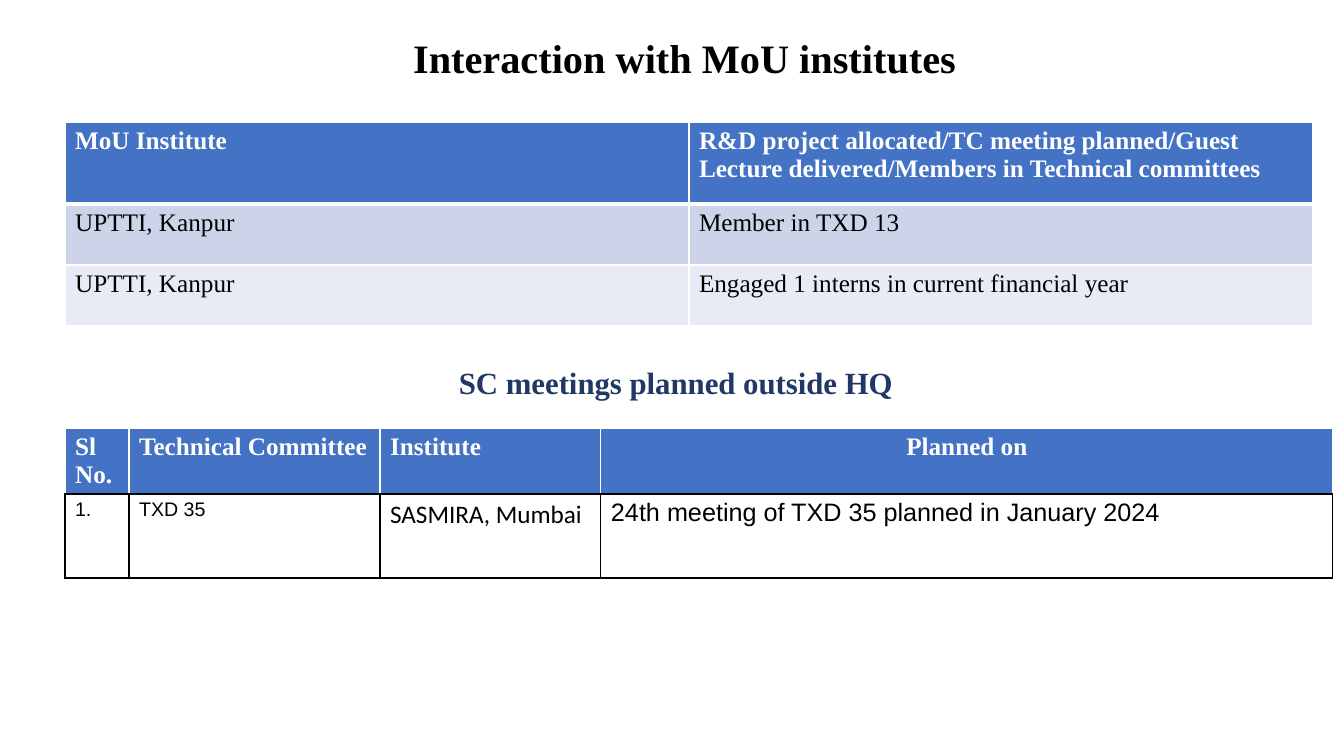
from pptx import Presentation
from pptx.dml.color import RGBColor as RGB
from pptx.enum.text import MSO_ANCHOR as Anchor, MSO_AUTO_SIZE as Auto, PP_ALIGN as Align
from pptx.oxml import parse_xml
from pptx.oxml.ns import nsdecls
from pptx.util import Pt

PX = 914400 / 100.8
HUES = {"white": "FFFFFF", "black": "000000", "blue": "4472C4",
        "navy": "203864", "mid": "CDD4EA", "pale": "E8EBF5"}
SERIF = "Times New Roman"


def px(n):
    """Turn whole px into EMU."""
    return round(n * PX)


def write(frame, text, size=18, font=SERIF, hue="black", bold=False,
          align=Align.LEFT, space=None):
    """Put one formatted paragraph in a text frame."""
    frame.word_wrap = True
    para = frame.paragraphs[0]
    para.alignment = align
    if space:
        para.line_spacing = space
    run = para.add_run()
    run.text = text
    run.font.size, run.font.name, run.font.bold = Pt(size), font, bold
    run.font.color.rgb = RGB.from_string(HUES[hue])


def edge(cell, **sides):
    """Draw cell borders, each side given as (hue, points)."""
    props = cell._tc.get_or_add_tcPr()
    for side in "LRTB":
        hue, width = sides.get(side, sides["rest"])
        props.append(parse_xml(
            f'<a:ln{side} {nsdecls("a")} w="{Pt(width)}"><a:solidFill>'
            f'<a:srgbClr val="{HUES[hue]}"/></a:solidFill></a:ln{side}>'))


def paint(cell, hue=None):
    """Fill a cell, or leave it clear."""
    if hue:
        cell.fill.solid()
        cell.fill.fore_color.rgb = RGB.from_string(HUES[hue])
    else:
        cell.fill.background()


def grid(slide, left, top, cols, rows):
    """Add a plain table with the given column and row sizes."""
    table = slide.shapes.add_table(len(rows), len(cols), px(left), px(top),
                                   px(sum(cols)), px(sum(rows))).table
    table.horz_banding = table.first_row = False
    for col, wide in zip(table.columns, cols):
        col.width = px(wide)
    for row, tall in zip(table.rows, rows):
        row.height = px(tall)
    return table


def head(slide, left, top, wide, tall):
    """Place the slide title."""
    title = slide.shapes.title
    title.left, title.top, title.width, title.height = map(px, (left, top, wide, tall))
    frame = title.text_frame
    frame.auto_size, frame.vertical_anchor = Auto.NONE, Anchor.MIDDLE
    write(frame, "Interaction with MoU institutes", size=28.8, bold=True, space=0.9)


def label(slide, left, top, wide, tall):
    """Place the heading over the meetings table."""
    box = slide.shapes.add_textbox(*map(px, (left, top, wide, tall)))
    write(box.text_frame, "SC meetings planned outside HQ", size=22, hue="navy", bold=True)
    box.text_frame.auto_size = Auto.SHAPE_TO_FIT_TEXT


def links(slide, left, top, wide):
    """Place the table of MoU institutes."""
    data = [("MoU Institute", "R&D project allocated/TC meeting planned/Guest "
             "Lecture delivered/Members in Technical committees"),
            ("UPTTI, Kanpur", "Member in TXD 13"),
            ("UPTTI, Kanpur", "Engaged 1 interns in current financial year")]
    table = grid(slide, left, top, [wide // 2] * 2, [82, 61, 61])
    thin, thick = ("white", 1), ("white", 3)
    for r, (row, hue) in enumerate(zip(data, ("blue", "mid", "pale"))):
        for c, text in enumerate(row):
            cell = table.cell(r, c)
            write(cell.text_frame, text, bold=r == 0, hue="black" if r else "white")
            edge(cell, rest=thin, T=thick if r == 1 else thin, B=thin if r else thick)
            paint(cell, hue)


def meets(slide, left, top, cols):
    """Place the table of planned meetings."""
    data = [("Sl No.", "1.", 14, "Arial", Align.LEFT, Align.LEFT),
            ("Technical Committee", "TXD 35", 14, "Arial", Align.LEFT, Align.LEFT),
            ("Institute", "SASMIRA, Mumbai", 18, "Calibri", Align.LEFT, Align.LEFT),
            ("Planned on", "24th meeting of TXD 35 planned in January 2024",
             18, "Arial", Align.CENTER, Align.JUSTIFY)]
    table = grid(slide, left, top, cols, [66, 84])
    for c, (name, text, size, font, high, low) in enumerate(data):
        cell = table.cell(0, c)
        write(cell.text_frame, name, hue="white", bold=True, align=high)
        edge(cell, rest=("white", 1), B=("black", 1))
        paint(cell, "blue")
        cell = table.cell(1, c)
        write(cell.text_frame, text, size=size, font=font, align=low)
        edge(cell, rest=("black", 1))
        paint(cell)


def main():
    """Build and save the slide."""
    deck = Presentation()
    deck.slide_width, deck.slide_height = px(1344), px(756)
    slide = deck.slides.add_slide(deck.slide_layouts[5])
    head(slide, 403, 38, 657, 45)
    links(slide, 65, 122, 1248)
    meets(slide, 65, 428, [64, 251, 221, 732])
    label(slide, 449, 359, 750, 47)
    deck.save("out.pptx")


if __name__ == "__main__":
    main()
